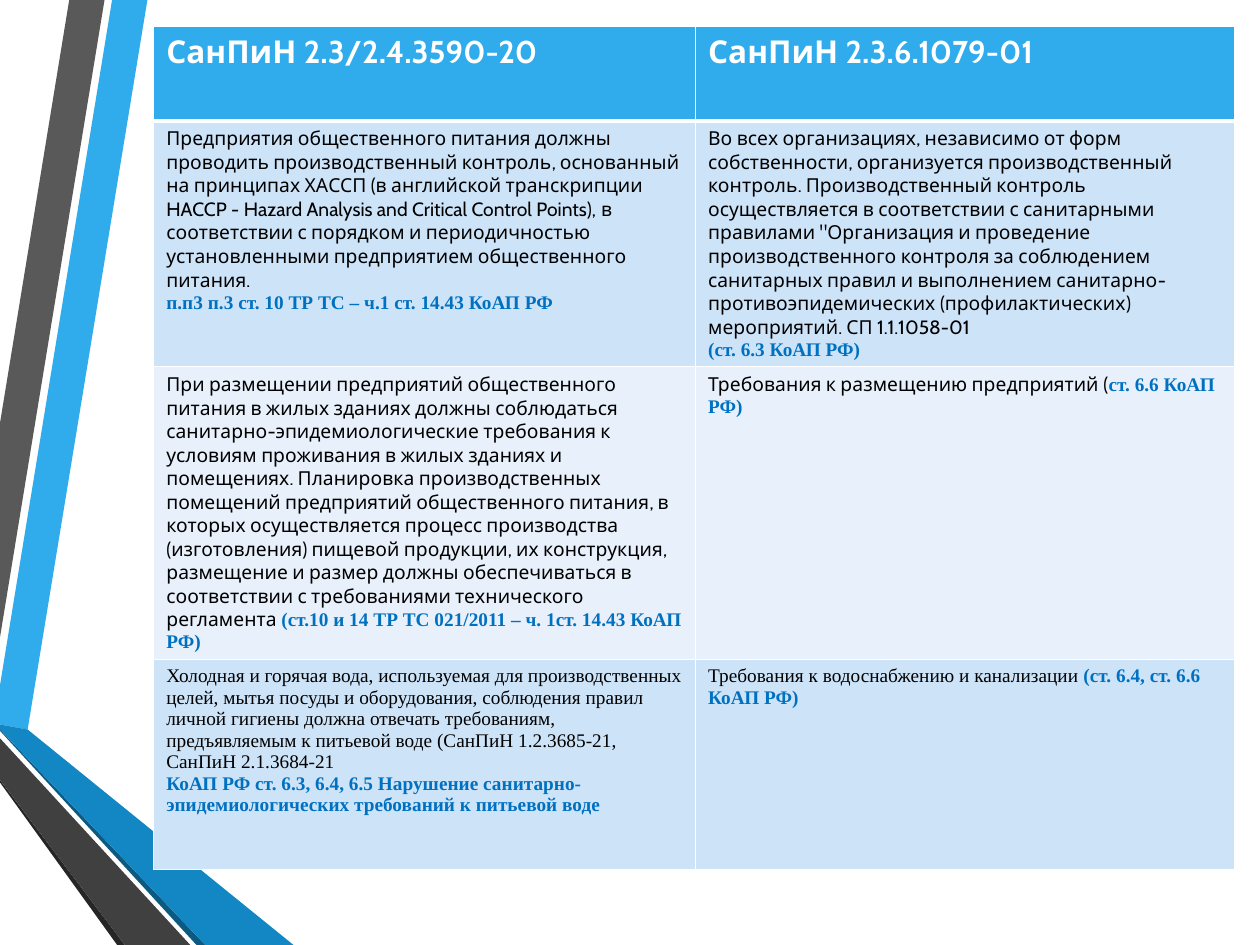
from dataclasses import dataclass

from lxml.etree import SubElement
from pptx import Presentation
from pptx.dml.color import RGBColor
from pptx.oxml.ns import qn
from pptx.util import Inches, Pt

WHITE = RGBColor(0xFF, 0xFF, 0xFF)
BLACK = RGBColor(0x00, 0x00, 0x00)
SKY = RGBColor(0x30, 0xAC, 0xEC)
BLUE = RGBColor(0x12, 0x87, 0xC3)
DEEP_BLUE = RGBColor(0x0C, 0x5A, 0x82)
GREY = RGBColor(0x59, 0x59, 0x59)
DARK_GREY = RGBColor(0x40, 0x40, 0x40)
CHARCOAL = RGBColor(0x26, 0x26, 0x26)
REFERENCE_BLUE = RGBColor(0x00, 0x70, 0xC0)
BAND_DARK = RGBColor(0xCD, 0xE3, 0xF8)
BAND_LIGHT = RGBColor(0xE8, 0xF1, 0xFB)

COLUMNS, ROWS = 10, 7.5


@dataclass(frozen=True)
class TextStyle:
    font: str
    size: float
    color: RGBColor
    bold: bool = False

    def apply(self, font):
        font.name = self.font
        font.size = Pt(self.size)
        font.color.rgb = self.color
        font.bold = self.bold


HEADING = TextStyle("Cabin", 18, WHITE, True)
BODY = TextStyle("Cabin", 11, BLACK)
SERIF = TextStyle("Times New Roman", 11, BLACK)
REFERENCE = TextStyle("Times New Roman", 11, REFERENCE_BLUE, True)


class SlideBuilder:
    def __init__(self, deck):
        self.slide = deck.slides.add_slide(deck.slide_layouts[6])
        self.column = deck.slide_width / COLUMNS
        self.row = deck.slide_height / ROWS

    def across(self, columns):
        return round(columns * self.column)

    def down(self, rows):
        return round(rows * self.row)

    def ribbon(self, color, points):
        start, *rest = [(self.across(x), self.down(y)) for x, y in points]
        builder = self.slide.shapes.build_freeform(*start)
        builder.add_line_segments(rest, close=True)
        ribbon = builder.convert_to_shape()
        ribbon.shadow.inherit = False
        ribbon.fill.solid()
        ribbon.fill.fore_color.rgb = color
        ribbon.line.fill.background()

    def border(self, cell, widths):
        properties = cell._tc.get_or_add_tcPr()
        for side, width in widths.items():
            line = SubElement(properties, qn(f"a:ln{side}"), w=str(Pt(width)))
            fill = SubElement(line, qn("a:solidFill"))
            SubElement(fill, qn("a:srgbClr"), val=str(WHITE))

    def cell_text(self, cell, paragraphs):
        frame = cell.text_frame
        for index, pieces in enumerate(paragraphs):
            paragraph = frame.add_paragraph() if index else frame.paragraphs[0]
            for text, style in pieces:
                run = paragraph.add_run()
                run.text = text
                style.apply(paragraph.font if len(pieces) == 1 else run.font)

    def table(self, left, top, widths, heights, fills, content):
        table = self.slide.shapes.add_table(
            len(heights), len(widths), self.across(left), self.down(top),
            self.across(sum(widths)), self.down(sum(heights))).table
        for column, width in zip(table.columns, widths):
            column.width = self.across(width)
        for index, (row, height) in enumerate(zip(table.rows, heights)):
            row.height = self.down(height)
            for cell, paragraphs in zip(row.cells, content[index]):
                self.border(cell, {"L": 1, "R": 1,
                                   "T": 3 if index == 1 else 1,
                                   "B": 3 if index == 0 else 1})
                cell.fill.solid()
                cell.fill.fore_color.rgb = fills[index]
                self.cell_text(cell, paragraphs)


RIBBONS = [
    (SKY, [(0, 5.44), (0, 5.75), (0.22, 5.79), (1.17, 0), (0.89, 0)]),
    (GREY, [(0.83, 0), (0.55, 0), (0, 3.36), (0, 5.06)]),
    (CHARCOAL, [(0, 6.19), (0, 6.21), (0.93, 7.5), (0.99, 7.5)]),
    (DEEP_BLUE, [(0, 5.79), (0, 5.8), (1.56, 7.5), (1.63, 7.5)]),
    (BLUE, [(0, 5.79), (1.63, 7.5), (2.33, 7.5), (0.22, 5.79), (0, 5.75)]),
    (DARK_GREY, [(0, 6.19), (0.99, 7.5), (1.51, 7.5), (0, 5.86)]),
]

COMPARISON = [
    [
        [[("СанПиН 2.3/2.4.3590-20", HEADING)]],
        [[("СанПиН 2.3.6.1079-01", HEADING)]],
    ],
    [
        [[("Предприятия общественного питания должны проводить производственный "
           "контроль, основанный на принципах ХАССП (в английской транскрипции "
           "HACCP - Hazard Analysis and Critical Control Points), в соответствии "
           "с порядком и периодичностью установленными предприятием "
           "общественного питания.", BODY)],
         [("п.п3 п.3 ст. 10 ТР ТС – ч.1 ст. 14.43 КоАП РФ", REFERENCE)]],
        [[("Во всех организациях, независимо от форм собственности, организуется "
           "производственный контроль. Производственный контроль осуществляется "
           'в соответствии с санитарными правилами "Организация и проведение '
           "производственного контроля за соблюдением санитарных правил и "
           "выполнением санитарно-противоэпидемических (профилактических) "
           "мероприятий. СП 1.1.1058-01", BODY)],
         [("(ст. 6.3 КоАП РФ)", REFERENCE)]],
    ],
    [
        [[("При размещении предприятий общественного питания в жилых зданиях "
           "должны соблюдаться санитарно-эпидемиологические требования к "
           "условиям проживания в жилых зданиях и помещениях. Планировка "
           "производственных помещений предприятий общественного питания, в "
           "которых осуществляется процесс производства (изготовления) пищевой "
           "продукции, их конструкция, размещение и размер должны "
           "обеспечиваться в соответствии с требованиями технического "
           "регламента ", BODY),
          ("(ст.10 и 14 ТР ТС 021/2011 – ч. 1ст. 14.43 КоАП РФ)", REFERENCE)]],
        [[("Требования к размещению предприятий (", BODY),
          ("ст. 6.6 КоАП РФ)", REFERENCE)]],
    ],
    [
        [[("Холодная и горячая вода, используемая для производственных целей, "
           "мытья посуды и оборудования, соблюдения правил личной гигиены "
           "должна отвечать требованиям, предъявляемым к питьевой воде "
           "(СанПиН 1.2.3685-21, СанПиН 2.1.3684-21", SERIF)],
         [("КоАП РФ ст. 6.3, 6.4, 6.5 Нарушение санитарно-эпидемиологических "
           "требований к питьевой воде", REFERENCE)]],
        [[("Требования к водоснабжению и канализации ", SERIF),
          ("(ст. 6.4, ст. 6.6 КоАП РФ)", REFERENCE)]],
    ],
]


def main():
    deck = Presentation()
    deck.slide_width, deck.slide_height = Inches(10), Inches(7.5)
    builder = SlideBuilder(deck)
    for color, points in RIBBONS:
        builder.ribbon(color, points)
    builder.table(1.22, 0.21, [4.3, 4.28], [0.75, 1.86, 2.26, 1.67],
                  [SKY, BAND_DARK, BAND_LIGHT, BAND_DARK], COMPARISON)
    deck.save("out.pptx")


if __name__ == "__main__":
    main()
